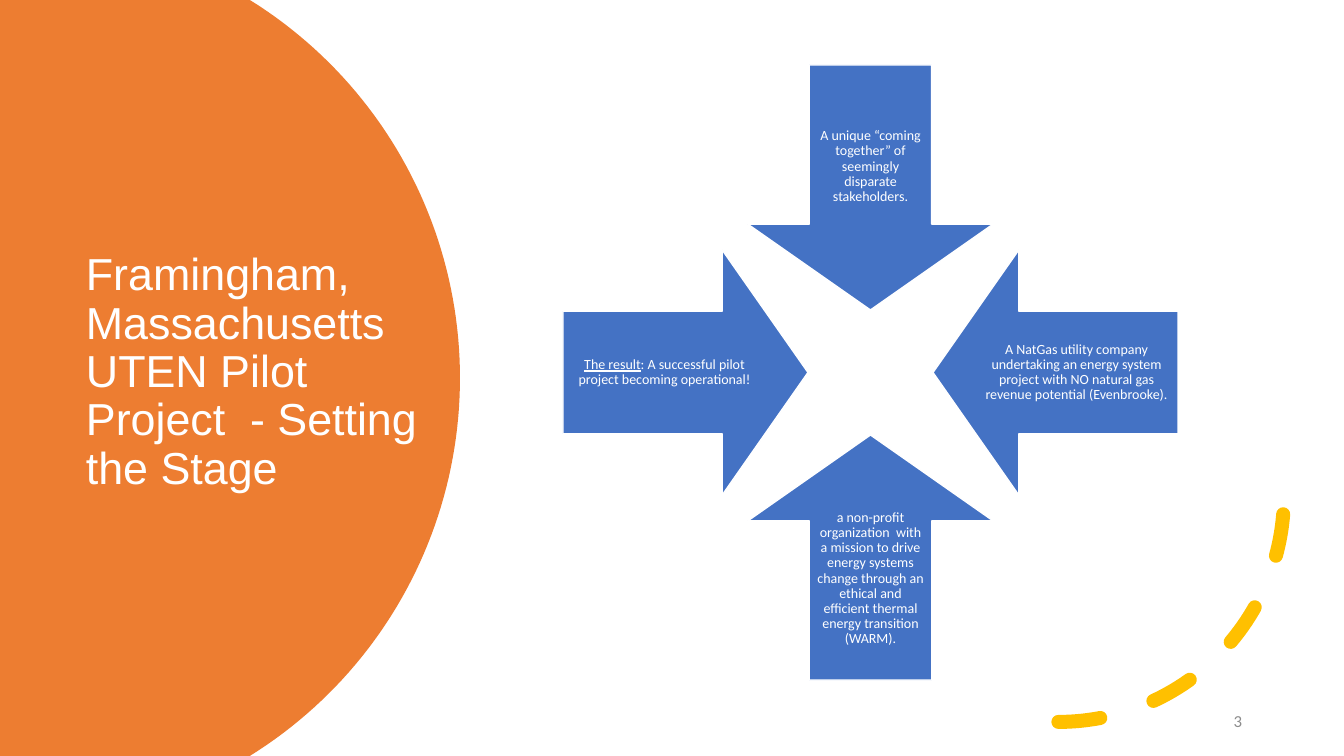
import math

from lxml import etree
from pptx import Presentation
from pptx.dml.color import RGBColor
from pptx.enum.dml import MSO_LINE
from pptx.enum.shapes import MSO_SHAPE
from pptx.enum.text import MSO_ANCHOR, PP_ALIGN
from pptx.util import Emu, Pt

ARC, DOWN_ARROW = MSO_SHAPE.ARC, MSO_SHAPE.DOWN_ARROW
DASH, MIDDLE = MSO_LINE.DASH, MSO_ANCHOR.MIDDLE
LEFT, CENTER, RIGHT = PP_ALIGN.LEFT, PP_ALIGN.CENTER, PP_ALIGN.RIGHT
EMU_PER_PX = 914400 / 100.8
SLIDE_WIDTH, SLIDE_HEIGHT = 1344, 756

ARROW_SIZE, ARROW_STEP = 245, 185
HUB_LEFT, HUB_TOP = 748, 250
LABEL_LONG, LABEL_SHORT, LABEL_SHIFT = 203, 123, 21

ARROWS = [
    (0, -1, 0, [("A unique “coming together” of seemingly disparate stakeholders.", False)]),
    (1, 0, 90, [("A NatGas utility company undertaking an energy system project with NO "
                 "natural gas revenue potential (Evenbrooke).", False)]),
    (0, 1, 180, [("a non-profit organization  with a mission to drive energy systems change "
                  "through an ethical and efficient thermal energy transition (WARM).", False)]),
    (-1, 0, 270, [("The result", True),
                  (": A successful pilot project becoming operational!", False)]),
]


def px(length):
    return Emu(round(length * EMU_PER_PX))


def color(value):
    return RGBColor.from_string(value)


class SlidePainter:
    """Draws the elements of one slide in a shared style."""

    orange, blue, gold, white, gray = "ED7D31", "4472C4", "FFC000", "FFFFFF", "8C8C8C"
    heading_font, body_font = "Arial", "Calibri"

    def __init__(self, page):
        self.shapes = page.shapes

    def disc(self, center_x, center_y, radius, segments=90):
        reach = math.asin(center_y / radius)
        angles = [reach * (2 * step / segments - 1) for step in range(segments + 1)]
        rim = [(px(center_x + radius * math.cos(angle)), px(center_y + radius * math.sin(angle)))
               for angle in angles]
        builder = self.shapes.build_freeform(0, 0)
        builder.add_line_segments(rim + [(0, px(2 * center_y))], close=True)
        disc = builder.convert_to_shape()
        disc.shadow.inherit = False
        disc.fill.solid()
        disc.fill.fore_color.rgb = color(self.orange)
        disc.line.fill.background()

    def preset(self, kind, left, top, size, line_color, line_width):
        shape = self.shapes.add_shape(kind, px(left), px(top), px(size), px(size))
        shape.shadow.inherit = False
        shape.line.color.rgb = color(line_color)
        shape.line.width = Pt(line_width)
        return shape

    def dashed_arc(self, left, top, size):
        arc = self.preset(ARC, left, top, size, self.gold, 10)
        arc.fill.background()
        arc.line.dash_style = DASH
        properties = arc._element.spPr
        properties.xfrm.set("flipV", "1")
        properties.ln.set("cap", "rnd")
        etree.SubElement(properties.ln, properties.ln.tag.replace("}ln", "}round"))

    def arrow(self, left, top, size, rotation):
        arrow = self.preset(DOWN_ARROW, left, top, size, self.white, 1)
        arrow.fill.solid()
        arrow.fill.fore_color.rgb = color(self.blue)
        arrow.adjustments[0] = 0.5
        arrow.adjustments[1] = 0.35
        arrow.rotation = rotation

    def text(self, left, top, width, height, spans, size, font, text_color,
             align=LEFT, spacing=0.9, inset=None):
        box = self.shapes.add_textbox(px(left), px(top), px(width), px(height))
        frame = box.text_frame
        frame.word_wrap = True
        frame.vertical_anchor = MIDDLE
        if inset is not None:
            frame.margin_left = frame.margin_right = px(inset)
            frame.margin_top = frame.margin_bottom = px(inset)
        para = frame.paragraphs[0]
        para.alignment = align
        para.line_spacing = spacing
        para.font.name = font
        para.font.size = Pt(size)
        para.font.color.rgb = color(text_color)
        for words, underlined in spans:
            for index, line in enumerate(words.split("\n")):
                if index:
                    para.add_line_break()
                span = para.add_run()
                span.text = line
                if underlined:
                    span.font.underline = True

    def labelled_arrow(self, across, down, rotation, spans):
        left = HUB_LEFT + across * ARROW_STEP
        top = HUB_TOP + down * ARROW_STEP
        self.arrow(left, top, ARROW_SIZE, rotation)
        width, height = (LABEL_LONG, LABEL_SHORT) if across else (LABEL_SHORT, LABEL_LONG)
        self.text(left + (ARROW_SIZE - width) // 2 + across * LABEL_SHIFT,
                  top + (ARROW_SIZE - height) // 2 + down * LABEL_SHIFT,
                  width, height, spans, 10, self.body_font, self.white, CENTER, inset=8)


def main():
    deck = Presentation()
    deck.slide_width, deck.slide_height = px(SLIDE_WIDTH), px(SLIDE_HEIGHT)
    painter = SlidePainter(deck.slides.add_slide(deck.slide_layouts[6]))
    painter.disc(15, SLIDE_HEIGHT // 2, 445)
    title = "Framingham, Massachusetts\nUTEN Pilot Project  - Setting the Stage"
    painter.text(76, 127, 353, 492, [(title, False)], 32, painter.heading_font, painter.white)
    painter.dashed_arc(833, 271, 451)
    for across, down, rotation, spans in ARROWS:
        painter.labelled_arrow(across, down, rotation, spans)
    painter.text(950, 701, 302, 40, [("3", False)], 12, painter.body_font, painter.gray,
                 RIGHT, spacing=1.0)
    deck.save("out.pptx")


if __name__ == "__main__":
    main()
